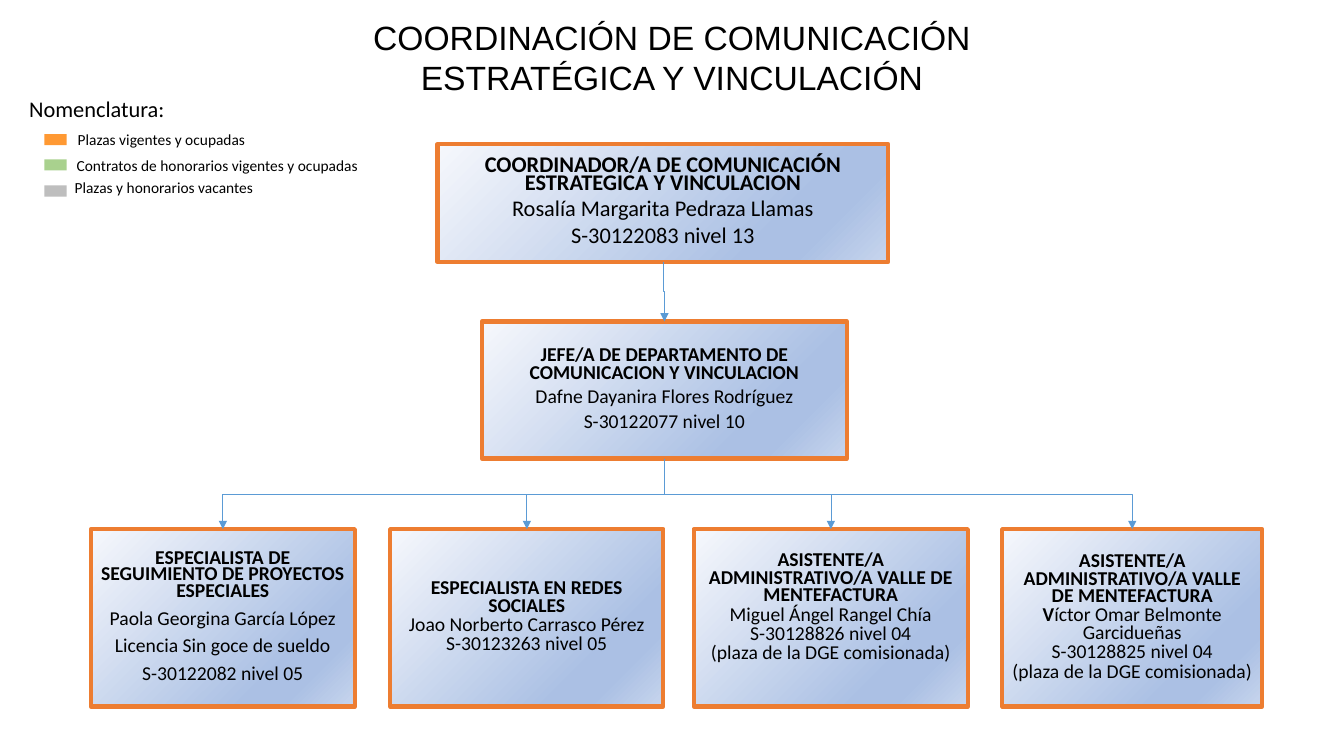
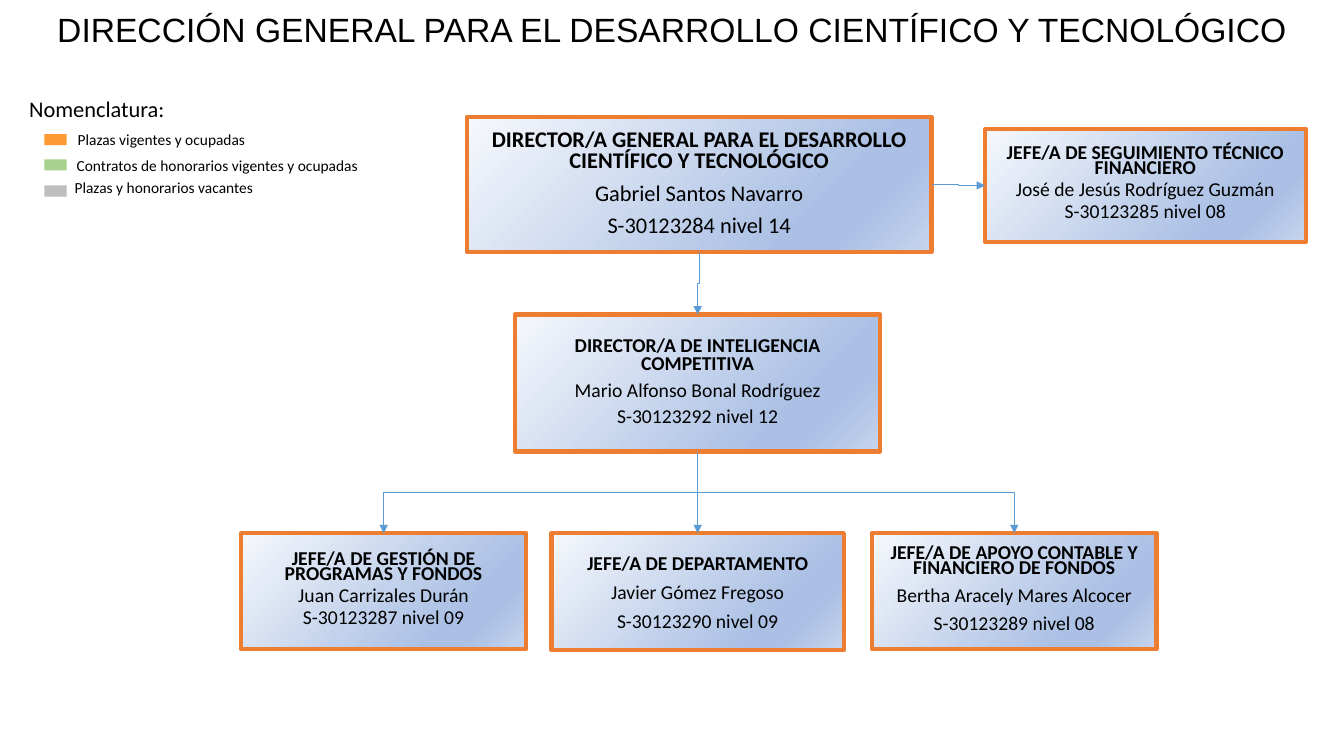
"""Build two organisation chart slides that share a title style, a legend and box formats."""
from copy import deepcopy

from lxml import etree
from pptx import Presentation
from pptx.dml.color import RGBColor
from pptx.enum import shapes, text
from pptx.oxml import ns
from pptx.util import Inches, Pt

COLORS = {
    "text": "000000", "border": "ED7D31", "link": "5B9BD5",
    "occupied": "FF9933", "contract": "A9D18E", "vacant": "BEBEBE",
    "pale": "F6F8FC", "blue": "ABC0E4", "soft": "C7D5ED",
}
GRADIENT = [(0, "pale"), (0.74, "blue"), (0.83, "blue"), (1, "soft")]
LEGEND = [
    ("occupied", 1.33, 0.77, 1.28, "Plazas vigentes y ocupadas"),
    ("contract", 1.58, 0.76, 1.54, "Contratos de honorarios vigentes y ocupadas"),
    ("vacant", 1.84, 0.74, 1.76, "Plazas y honorarios vacantes"),
]
TOP, LEFT, BOTTOM, RIGHT = range(4)
TIGHT = dict(line=Pt(12.6), before=1.1)
COMPACT = dict(line=Pt(10.8), before=2.3)
CLOSE = dict(line=Pt(15), before=0.8)
MEDIUM = dict(line=Pt(16.6), before=0.8)
WIDE = dict(line=Pt(18), before=0.8)

CHARTS = [
    {
        "title": "COORDINACIÓN DE COMUNICACIÓN ESTRATÉGICA Y VINCULACIÓN",
        "title_at": (2.45, 0.12, 8.43, 0.91),
        "boxes": [
            dict(at=(4.34, 1.43, 4.47, 1.17), size=16,
                 role="COORDINADOR/A DE COMUNICACIÓN ESTRATEGICA Y VINCULACION",
                 role_gap=dict(line=Pt(13), before=2.6),
                 lines=["Rosalía Margarita Pedraza Llamas", "S-30122083 nivel 13"], gap=WIDE),
            dict(at=(4.78, 3.19, 3.62, 1.36),
                 role="JEFE/A DE DEPARTAMENTO DE COMUNICACION Y VINCULACION", role_gap=TIGHT,
                 lines=["Dafne Dayanira Flores Rodríguez", "S-30122077 nivel 10"], gap=MEDIUM),
            dict(at=(0.9, 5.25, 2.62, 1.76),
                 role="ESPECIALISTA DE SEGUIMIENTO DE PROYECTOS ESPECIALES",
                 role_gap=dict(line=Pt(11.9), before=2.5),
                 lines=["Paola Georgina García López", "Licencia Sin goce de sueldo",
                        "S-30122082 nivel 05"], gap=dict(before=3)),
            dict(at=(3.87, 5.25, 2.71, 1.76),
                 role="ESPECIALISTA EN REDES SOCIALES", role_gap=TIGHT,
                 lines=["Joao Norberto Carrasco Pérez", "S-30123263 nivel 05"], gap=TIGHT),
            dict(at=(6.88, 5.25, 2.72, 1.76), bottom=0.24,
                 role="ASISTENTE/A ADMINISTRATIVO/A VALLE DE MENTEFACTURA", role_gap=TIGHT,
                 lines=["Miguel Ángel Rangel Chía", "S-30128826 nivel 04",
                        "(plaza de la DGE comisionada)"], gap=TIGHT),
            dict(at=(9.94, 5.25, 2.58, 1.76), initial=1,
                 role="ASISTENTE/A ADMINISTRATIVO/A VALLE DE MENTEFACTURA", role_gap=TIGHT,
                 lines=["Víctor Omar Belmonte Garcidueñas", "S-30128825 nivel 04",
                        "(plaza de la DGE comisionada)"], gap=TIGHT),
        ],
        "links": [(0, 1), (1, 2), (1, 3), (1, 4), (1, 5)],
        "side_links": [],
    },
    {
        "title": "DIRECCIÓN GENERAL PARA EL DESARROLLO CIENTÍFICO Y TECNOLÓGICO",
        "title_at": (0, 0.04, 13.33, 0.5),
        "boxes": [
            dict(at=(4.63, 1.16, 4.61, 1.34), size=16,
                 role="DIRECTOR/A GENERAL PARA EL DESARROLLO CIENTÍFICO Y TECNOLÓGICO",
                 role_gap=dict(line=Pt(15.1), before=3),
                 lines=["Gabriel Santos Navarro", "S-30123284 nivel 14"], gap=dict(before=4)),
            dict(at=(9.77, 1.28, 3.18, 1.12),
                 role="JEFE/A DE SEGUIMIENTO TÉCNICO FINANCIERO", role_gap=COMPACT,
                 lines=["José de Jesús Rodríguez Guzmán", "S-30123285 nivel 08"], gap=CLOSE),
            dict(at=(5.11, 3.12, 3.62, 1.36),
                 role="DIRECTOR/A DE INTELIGENCIA COMPETITIVA",
                 role_gap=dict(line=Pt(13), before=2.6),
                 lines=["Mario Alfonso Bonal Rodríguez", "S-30123292 nivel 12"], gap=WIDE),
            dict(at=(2.39, 5.29, 2.83, 1.15),
                 role="JEFE/A DE GESTIÓN DE PROGRAMAS Y FONDOS", role_gap=COMPACT,
                 lines=["Juan Carrizales Durán", "S-30123287 nivel 09"], gap=CLOSE),
            dict(at=(5.47, 5.29, 2.9, 1.16),
                 role="JEFE/A DE DEPARTAMENTO", role_gap=dict(before=4),
                 lines=["Javier Gómez Fregoso", "S-30123290 nivel 09"], gap=dict(line=1.25)),
            dict(at=(8.65, 5.29, 2.82, 1.15),
                 role="JEFE/A DE APOYO CONTABLE Y FINANCIERO DE FONDOS", role_gap=COMPACT,
                 lines=["Bertha Aracely Mares Alcocer", "S-30123289 nivel 08"],
                 gap=dict(before=3)),
        ],
        "links": [(0, 2), (2, 3), (2, 4), (2, 5)],
        "side_links": [(0, 1)],
    },
]


def write(frame, words, size=14, font="Calibri", bold=False, initial=0,
          align=text.PP_ALIGN.CENTER, line=None, before=0):
    para = frame.add_paragraph() if frame.text else frame.paragraphs[0]
    para.alignment = align
    para.line_spacing = line
    para.space_before = Pt(before)
    for part, heavy in ((words[:initial], True), (words[initial:], bold)):
        if part:
            span = para.add_run()
            span.text = part
            span.font.name = font
            span.font.size = Pt(size)
            span.font.bold = heavy
            span.font.color.rgb = RGBColor.from_string(COLORS["text"])


def connect(page, start, end, start_site, end_site):
    line = page.shapes.add_connector(shapes.MSO_CONNECTOR.ELBOW, 0, 0, 0, 0)
    line.begin_connect(start, start_site)
    line.end_connect(end, end_site)
    line.line.color.rgb = RGBColor.from_string(COLORS["link"])
    line.line.width = Pt(0.5)
    etree.SubElement(line.line._get_or_add_ln(), ns.qn("a:tailEnd"), type="triangle")
    properties = line._element.spPr
    etree.SubElement(properties, ns.qn("a:effectLst"))
    if start_site == BOTTOM:
        shift = line.end_x - line.begin_x
        drop = line.end_y - line.begin_y
        middle_x = (line.begin_x + line.end_x) // 2
        middle_y = (line.begin_y + line.end_y) // 2
        line.width, line.height = drop, abs(shift)
        line.left, line.top = middle_x - drop // 2, middle_y - abs(shift) // 2
        frame = properties.find(ns.qn("a:xfrm"))
        frame.set("rot", str((270 if shift > 0 else 90) * 60000))
        frame.set("flipH", "1" if shift > 0 else "0")


deck = Presentation()
deck.slide_width, deck.slide_height = Inches(13.33), Inches(7.5)

for chart in CHARTS:
    page = deck.slides.add_slide(deck.slide_layouts[6])
    title = page.shapes.add_textbox(*map(Inches, chart["title_at"])).text_frame
    title.word_wrap = True
    write(title, chart["title"], size=24, font="Arial")

    labels = [(0.29, 0.93, 1.74, 0.28, "Nomenclatura:", 16)]
    for color, swatch_top, left, top, words in LEGEND:
        swatch = page.shapes.add_shape(
            shapes.MSO_SHAPE.RECTANGLE,
            Inches(0.44), Inches(swatch_top), Inches(0.22), Inches(0.11))
        swatch.shadow.inherit = False
        swatch.fill.solid()
        swatch.fill.fore_color.rgb = RGBColor.from_string(COLORS[color])
        swatch.line.fill.background()
        labels.append((left, top, 2.87, 0.2, words, 11))
    for *place, words, size in labels:
        label = page.shapes.add_textbox(*map(Inches, place)).text_frame
        label.word_wrap = True
        label.margin_left = label.margin_right = label.margin_bottom = 0
        label.margin_top = Inches(0.01)
        write(label, words, size=size, align=text.PP_ALIGN.LEFT, before=1.1)

    boxes = []
    for post in chart["boxes"]:
        box = page.shapes.add_shape(shapes.MSO_SHAPE.RECTANGLE, *map(Inches, post["at"]))
        box.shadow.inherit = False
        box.line.color.rgb = RGBColor.from_string(COLORS["border"])
        box.line.width = Pt(3)
        box.fill.gradient()
        box.fill.gradient_angle = 315
        stops = box._element.spPr.find(".//" + ns.qn("a:gsLst"))
        while len(stops) < len(GRADIENT):
            stops.append(deepcopy(stops[0]))
        for stop, (position, color) in zip(box.fill.gradient_stops, GRADIENT):
            stop.position = position
            stop.color.rgb = RGBColor.from_string(COLORS[color])
        frame = box.text_frame
        frame.word_wrap = True
        frame.vertical_anchor = text.MSO_ANCHOR.MIDDLE
        frame.margin_bottom = Inches(post.get("bottom", 0.05))
        size = post.get("size", 14)
        write(frame, post["role"], size=size, bold=True, **post["role_gap"])
        for index, words in enumerate(post["lines"]):
            initial = post.get("initial", 0) if index == 0 else 0
            write(frame, words, size=size, initial=initial, **post["gap"])
        boxes.append(box)

    for start, end in chart["links"]:
        connect(page, boxes[start], boxes[end], BOTTOM, TOP)
    for start, end in chart["side_links"]:
        connect(page, boxes[start], boxes[end], RIGHT, LEFT)

deck.save("out.pptx")
